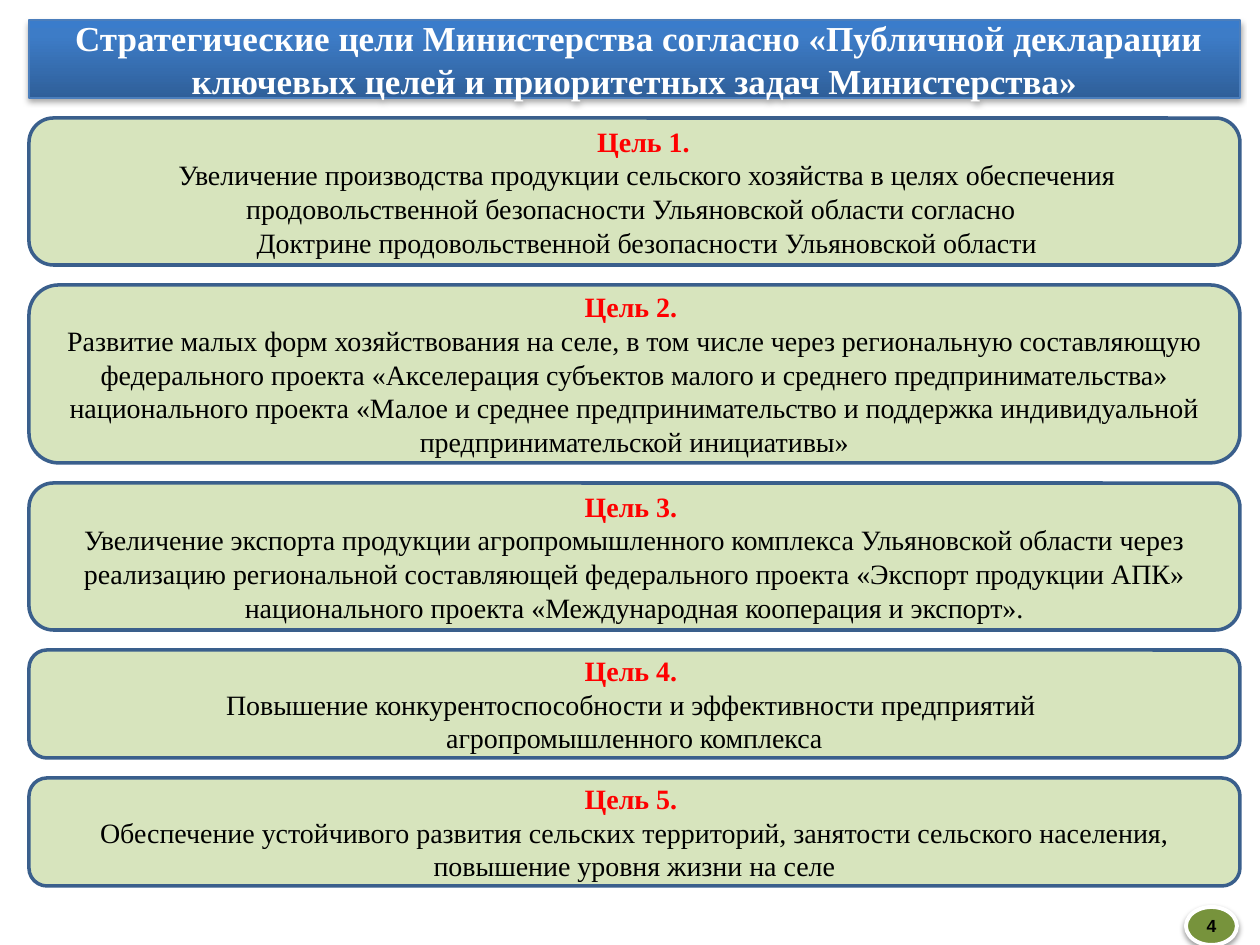
from copy import deepcopy
from typing import NamedTuple

from lxml.etree import SubElement
from pptx import Presentation
from pptx.dml.color import RGBColor
from pptx.enum.shapes import MSO_SHAPE
from pptx.enum.text import MSO_ANCHOR, MSO_AUTO_SIZE, PP_ALIGN
from pptx.oxml.ns import qn
from pptx.util import Emu, Pt

PX = 914400 / 126
LEFT, WIDTH = 29, 1211
GOALS_TOP, GAP = 118, 20
COLORS = {
    "goal": "D7E4BD", "goal_line": "3A5F8C", "heading": "FF0000",
    "text": "000000", "white": "FFFFFF", "title_line": "4B7EBC",
    "badge": "77933C", "shadow": "000000",
}
TITLE_STOPS = [(0, "2F5F99"), (0.8, "3D7CC7"), (1, "3A7CCB")]


class Goal(NamedTuple):
    height: int
    heading: str
    body: list[str]
    indent: int = 0


GOALS = [
    Goal(147, "Цель 1. ", [
        "Увеличение производства продукции сельского хозяйства в целях обеспечения "
        "продовольственной безопасности Ульяновской области согласно ",
        "Доктрине продовольственной безопасности Ульяновской области"], indent=25),
    Goal(178, "Цель 2. ", [
        "Развитие малых форм хозяйствования на селе, в том числе через региональную "
        "составляющую федерального проекта «Акселерация субъектов малого и среднего "
        "предпринимательства» национального проекта «Малое и среднее предпринимательство "
        "и поддержка индивидуальной предпринимательской инициативы»"]),
    Goal(147, "Цель 3. ", [
        "Увеличение экспорта продукции агропромышленного комплекса Ульяновской области "
        "через реализацию региональной составляющей федерального проекта «Экспорт "
        "продукции АПК» национального проекта «Международная кооперация и экспорт»."]),
    Goal(108, "Цель 4. ", [
        "Повышение конкурентоспособности и эффективности предприятий ",
        "агропромышленного комплекса"]),
    Goal(108, "Цель 5. ", [
        "Обеспечение устойчивого развития сельских территорий, занятости сельского "
        "населения, повышение уровня жизни на селе"]),
]


def px(n: int) -> Emu:
    return Emu(round(n * PX))


def rgb(name: str) -> RGBColor:
    return RGBColor.from_string(COLORS[name])


def write(p, text: str, *, size: int, color: str, bold: bool = False,
          font: str = "Times New Roman", indent: int = 0) -> None:
    p.alignment = PP_ALIGN.CENTER
    if indent:
        p._p.get_or_add_pPr().set("indent", str(px(indent)))
    r = p.add_run()
    r.text = text
    r.font.name, r.font.size, r.font.bold = font, Pt(size), bold
    r.font.color.rgb = rgb(color)


def set_line(s, color: str, width: float) -> None:
    s.line.color.rgb = rgb(color)
    s.line.width = Pt(width)


def set_frame(s, inset_x: int, inset_y: int):
    tf = s.text_frame
    tf.word_wrap, tf.auto_size = True, MSO_AUTO_SIZE.NONE
    tf.vertical_anchor = MSO_ANCHOR.MIDDLE
    tf.margin_left = tf.margin_right = px(inset_x)
    tf.margin_top = tf.margin_bottom = px(inset_y)
    return tf


def add_shadow(s, opacity: int, blur: float, distance: float) -> None:
    """Cast an outer shadow straight down."""
    s.shadow.inherit = False
    effects = s._element.spPr.find(qn("a:effectLst"))
    outer = SubElement(effects, qn("a:outerShdw"), blurRad=str(Pt(blur)),
                       dist=str(Pt(distance)), dir="5400000", rotWithShape="0")
    color = SubElement(outer, qn("a:srgbClr"), val=COLORS["shadow"])
    SubElement(color, qn("a:alpha"), val=str(opacity * 1000))


def add_filled(slide, kind: MSO_SHAPE, box: tuple[int, int, int, int], fill: str):
    s = slide.shapes.add_shape(kind, *map(px, box))
    s.shadow.inherit = False
    s.fill.solid()
    s.fill.fore_color.rgb = rgb(fill)
    return s


def format_title(s) -> None:
    s.left, s.top, s.width, s.height = map(px, (LEFT, 20, WIDTH, 78))
    s.fill.gradient()
    s.fill.gradient_angle = 90
    stops = s._element.spPr.find(qn("a:gradFill")).find(qn("a:gsLst"))
    stops.append(deepcopy(stops[-1]))
    for stop, (position, color) in zip(s.fill.gradient_stops, TITLE_STOPS):
        stop.position = position
        stop.color.rgb = RGBColor.from_string(color)
    set_line(s, "title_line", 0.75)
    add_shadow(s, 35, 3.1, 1.8)
    tf = set_frame(s, 13, 6)
    write(tf.paragraphs[0], " Стратегические цели Министерства согласно «Публичной "
          "декларации ключевых целей и приоритетных задач Министерства»",
          size=20, color="white", bold=True)


def add_goal(slide, goal: Goal, top: int) -> None:
    s = add_filled(slide, MSO_SHAPE.ROUNDED_RECTANGLE,
                   (LEFT, top, WIDTH, goal.height), "goal")
    set_line(s, "goal_line", 2)
    tf = set_frame(s, 0, 0)
    write(tf.paragraphs[0], goal.heading, size=16, color="heading", bold=True,
          indent=goal.indent)
    for text in goal.body:
        write(tf.add_paragraph(), text, size=16, color="text", indent=goal.indent)


def add_page_badge(slide, number: str) -> None:
    s = add_filled(slide, MSO_SHAPE.OVAL, (1186, 907, 51, 38), "badge")
    set_line(s, "white", 2.25)
    add_shadow(s, 38, 3.1, 1.6)
    tf = set_frame(s, 0, 6)
    write(tf.paragraphs[0], number, size=10, color="text", bold=True, font="Arial")


def main() -> None:
    prs = Presentation()
    prs.slide_width, prs.slide_height = px(1260), px(945)
    slide = prs.slides.add_slide(prs.slide_layouts[5])
    format_title(slide.shapes.title)
    top = GOALS_TOP
    for goal in GOALS:
        add_goal(slide, goal, top)
        top += goal.height + GAP
    add_page_badge(slide, "4")
    prs.save("out.pptx")


if __name__ == "__main__":
    main()
